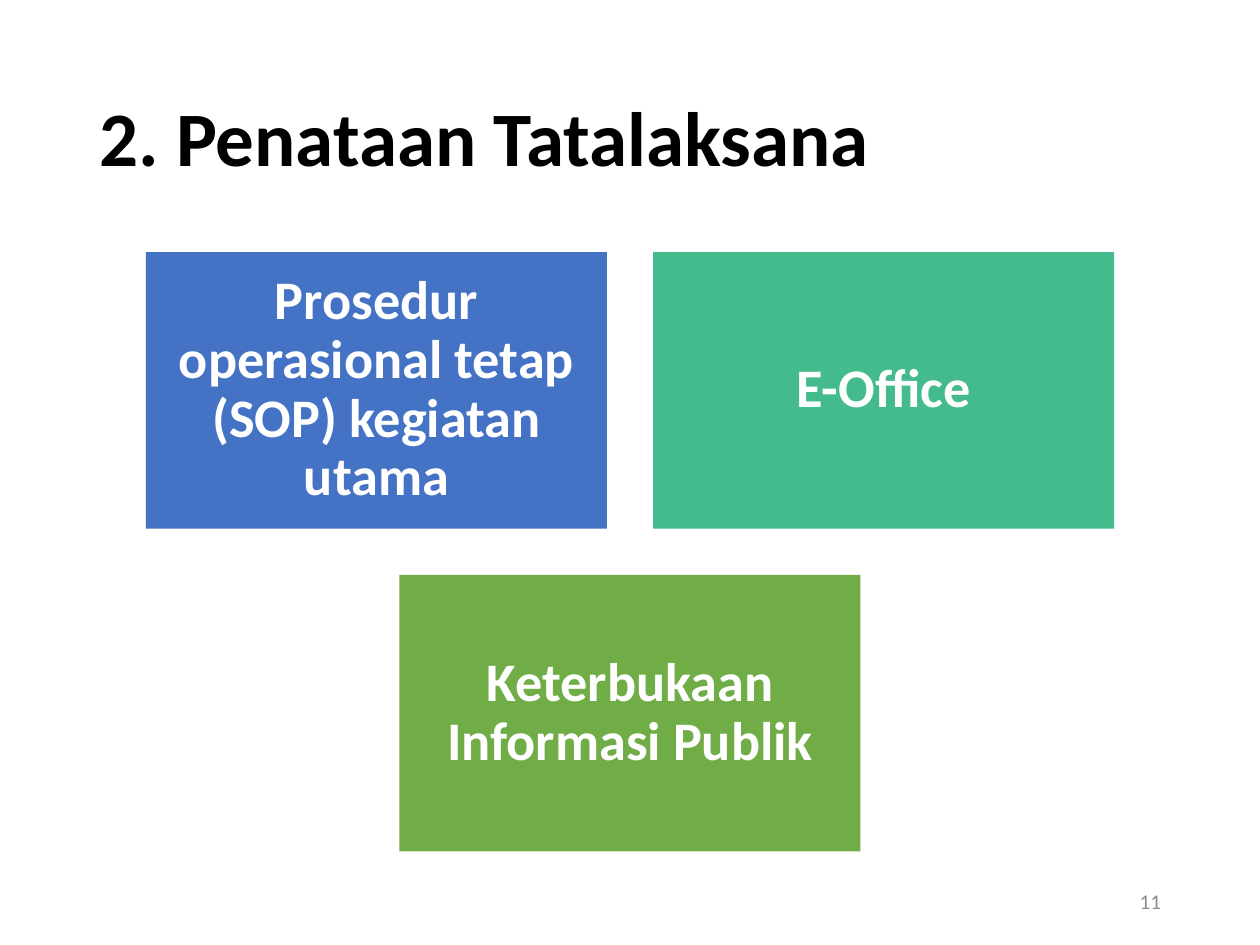
from pptx import Presentation
from pptx.dml.color import RGBColor
from pptx.enum import shapes, text
from pptx.util import Pt

WIDTH, HEIGHT = 720, 540
BOX_W, BOX_H, GAP, TOP = 263.5, 158.1, 26.35, 144
ROWS = [
    [("Prosedur operasional tetap (SOP) kegiatan utama", "4472C4"),
     ("E-Office", "43BB8D")],
    [("Keterbukaan Informasi Publik", "70AD47")],
]


def color(code):
    return RGBColor.from_string(code)


class Deck:
    face = "Calibri"
    heading = {"size": Pt(44), "bold": True}
    label = {"size": Pt(31), "bold": True}
    small = {"size": Pt(12), "bold": False}

    def __init__(self):
        self.prs = Presentation()
        self.prs.slide_width = Pt(WIDTH)
        self.prs.slide_height = Pt(HEIGHT)
        self.slide = self.prs.slides.add_slide(self.prs.slide_layouts[5])

    def letter(self, shape, words, form, ink, align, inset=None, space=None):
        frame = shape.text_frame
        frame.text = words
        frame.word_wrap = True
        frame.auto_size = text.MSO_AUTO_SIZE.NONE
        frame.vertical_anchor = text.MSO_ANCHOR.MIDDLE
        if inset is not None:
            for side in ("left", "top", "right", "bottom"):
                setattr(frame, f"margin_{side}", Pt(inset))
        para = frame.paragraphs[0]
        para.alignment = align
        para.line_spacing = space
        font = para.runs[0].font
        for key, value in {"name": self.face, **form}.items():
            setattr(font, key, value)
        font.color.rgb = color(ink)

    def title(self, words, left, top, width, height):
        shape = self.slide.shapes.title
        spot = {"left": left, "top": top, "width": width, "height": height}
        for key, value in spot.items():
            setattr(shape, key, Pt(value))
        self.letter(shape, words, self.heading, "000000",
                    text.PP_ALIGN.LEFT, space=0.9)

    def box(self, words, fill, left, top):
        shape = self.slide.shapes.add_shape(
            shapes.MSO_SHAPE.RECTANGLE,
            Pt(left), Pt(top), Pt(BOX_W), Pt(BOX_H))
        shape.shadow.inherit = False
        shape.fill.solid()
        shape.fill.fore_color.rgb = color(fill)
        shape.line.fill.background()
        self.letter(shape, words, self.label, "FFFFFF",
                    text.PP_ALIGN.CENTER, inset=9.3, space=0.9)

    def number(self, words, left, top, width, height):
        shape = self.slide.shapes.add_textbox(
            Pt(left), Pt(top), Pt(width), Pt(height))
        self.letter(shape, words, self.small, "8C8C8C", text.PP_ALIGN.RIGHT)


def main():
    deck = Deck()
    deck.title("2. Penataan Tatalaksana", 49.5, 28.75, 621, 104.4)
    for r, row in enumerate(ROWS):
        span = len(row) * (BOX_W + GAP) - GAP
        start = (WIDTH - span) / 2
        for c, (words, fill) in enumerate(row):
            deck.box(words, fill, start + c * (BOX_W + GAP),
                     TOP + r * (BOX_H + GAP))
    deck.number("11", 508.5, 500.5, 162, 28.75)
    deck.prs.save("out.pptx")


if __name__ == "__main__":
    main()
